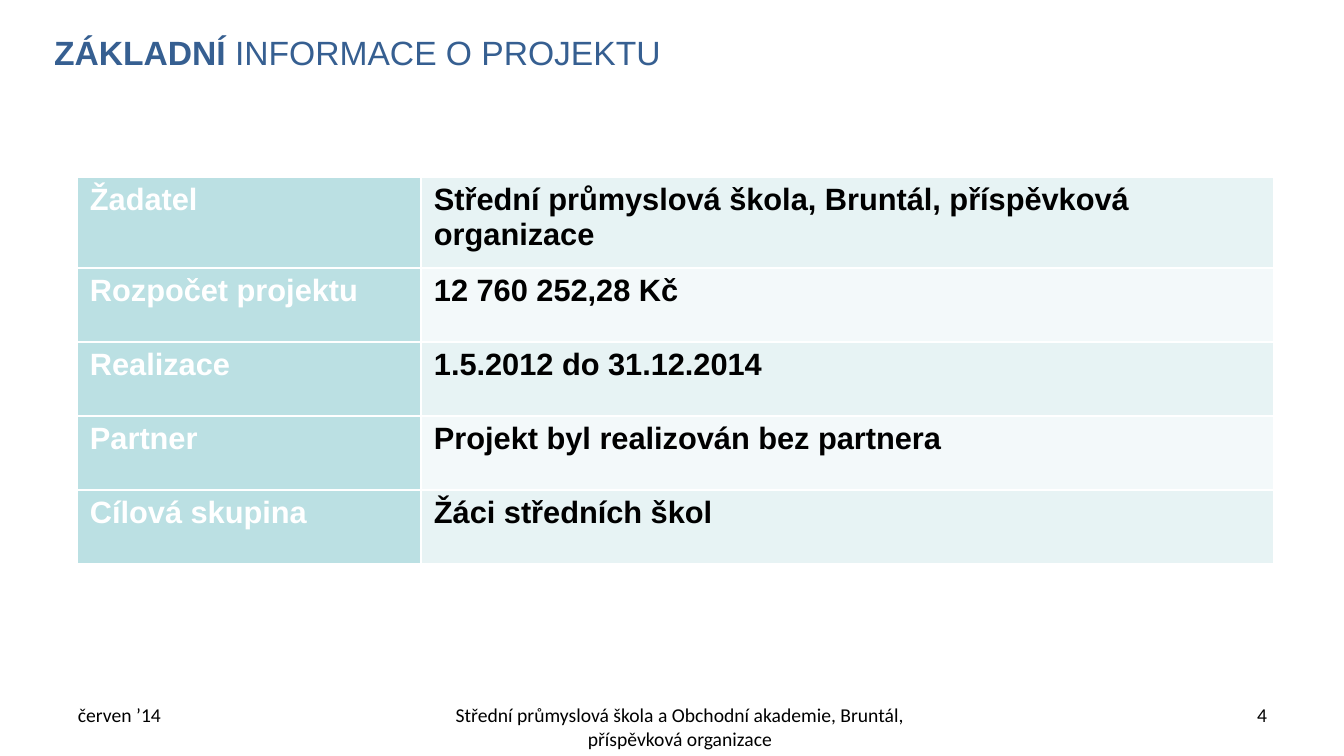
from lxml import etree
from pptx import Presentation
from pptx.dml.color import RGBColor
from pptx.enum.text import MSO_ANCHOR, MSO_AUTO_SIZE, PP_ALIGN
from pptx.oxml.ns import qn
from pptx.util import Emu, Pt

LEFT, CENTER, RIGHT = PP_ALIGN.LEFT, PP_ALIGN.CENTER, PP_ALIGN.RIGHT
TOP, MIDDLE = MSO_ANCHOR.TOP, MSO_ANCHOR.MIDDLE

# Content
TITLE = [("ZÁKLADNÍ ", True), ("INFORMACE O PROJEKTU", False)]
PROJECT = [
    ("Žadatel", "Střední průmyslová škola, Bruntál, příspěvková organizace"),
    ("Rozpočet projektu", "12 760 252,28 Kč"),
    ("Realizace", "1.5.2012 do 31.12.2014"),
    ("Partner", "Projekt byl realizován bez partnera"),
    ("Cílová skupina", "Žáci středních škol"),
]
FOOTER = [  # text, left, width, alignment
    ("červen ’14", 68, 313, LEFT),
    ("Střední průmyslová škola a Obchodní akademie, Bruntál, příspěvková organizace",
     428, 504, CENTER),
    ("4", 964, 313, RIGHT),
]

# Layout in px
PX = 914400 / 100.8
TITLE_BOX = (44, 17, 1131, 71)
TABLE_LEFT, TABLE_TOP = 77, 177
COLUMNS = (344, 853)
ROWS = (91, 74, 74, 74, 74)
FOOTER_TOP, FOOTER_HEIGHT = 698, 44
CELL_MARGINS = {"margin_left": 13, "margin_right": 13, "margin_top": 6, "margin_bottom": 6}

# Formats
WHITE, BLACK, BLUE = "FFFFFF", "000000", "365F91"
LABEL_FILL, BAND_FILLS = "BBE0E3", ("E7F3F4", "F3F9FA")
TITLE_FONT = {"name": "Arial", "size": Pt(24)}
TABLE_FONT = {"name": "Arial", "size": Pt(22), "bold": True}
FOOTER_FONT = {"name": "Calibri", "size": Pt(14)}


def px(n):
    return Emu(round(n * PX))


def rgb(color):
    return RGBColor.from_string(color)


def add_run(p, text, font, color):
    r = p.add_run()
    r.text = text
    for key, value in font.items():
        setattr(r.font, key, value)
    r.font.color.rgb = rgb(color)


def set_borders(cell, color, width):
    tcPr = cell._tc.get_or_add_tcPr()
    for i, side in enumerate(("a:lnL", "a:lnR", "a:lnT", "a:lnB")):
        ln = etree.Element(qn(side), w=str(Pt(width)))
        fill = etree.SubElement(ln, qn("a:solidFill"))
        etree.SubElement(fill, qn("a:srgbClr"), val=color)
        tcPr.insert(i, ln)


prs = Presentation()
prs.slide_width, prs.slide_height = px(1344), px(756)
s = prs.slides.add_slide(prs.slide_layouts[5])

# Title
title = s.shapes.title
title.left, title.top, title.width, title.height = map(px, TITLE_BOX)
tf = title.text_frame
tf.auto_size, tf.vertical_anchor = MSO_AUTO_SIZE.NONE, MIDDLE
p = tf.paragraphs[0]
p.alignment = LEFT
for text, bold in TITLE:
    add_run(p, text, {**TITLE_FONT, "bold": bold}, BLUE)

# Project table
table = s.shapes.add_table(len(ROWS), len(COLUMNS), px(TABLE_LEFT), px(TABLE_TOP),
                           px(sum(COLUMNS)), px(sum(ROWS))).table
table.first_row, table.first_col, table.horz_banding = False, True, True
for column, width in zip(table.columns, COLUMNS):
    column.width = px(width)
for i, (height, texts) in enumerate(zip(ROWS, PROJECT)):
    table.rows[i].height = px(height)
    styles = ((LABEL_FILL, WHITE), (BAND_FILLS[i % 2], BLACK))
    for j, (text, (fill, color)) in enumerate(zip(texts, styles)):
        cell = table.cell(i, j)
        for key, value in CELL_MARGINS.items():
            setattr(cell, key, px(value))
        cell.vertical_anchor = TOP
        cell.fill.solid()
        cell.fill.fore_color.rgb = rgb(fill)
        set_borders(cell, WHITE, 1)
        add_run(cell.text_frame.paragraphs[0], text, TABLE_FONT, color)

# Footer
for text, left, width, alignment in FOOTER:
    box = s.shapes.add_textbox(px(left), px(FOOTER_TOP), px(width), px(FOOTER_HEIGHT))
    tf = box.text_frame
    tf.word_wrap, tf.vertical_anchor = True, TOP
    p = tf.paragraphs[0]
    p.alignment = alignment
    add_run(p, text, FOOTER_FONT, BLACK)

prs.save("out.pptx")
